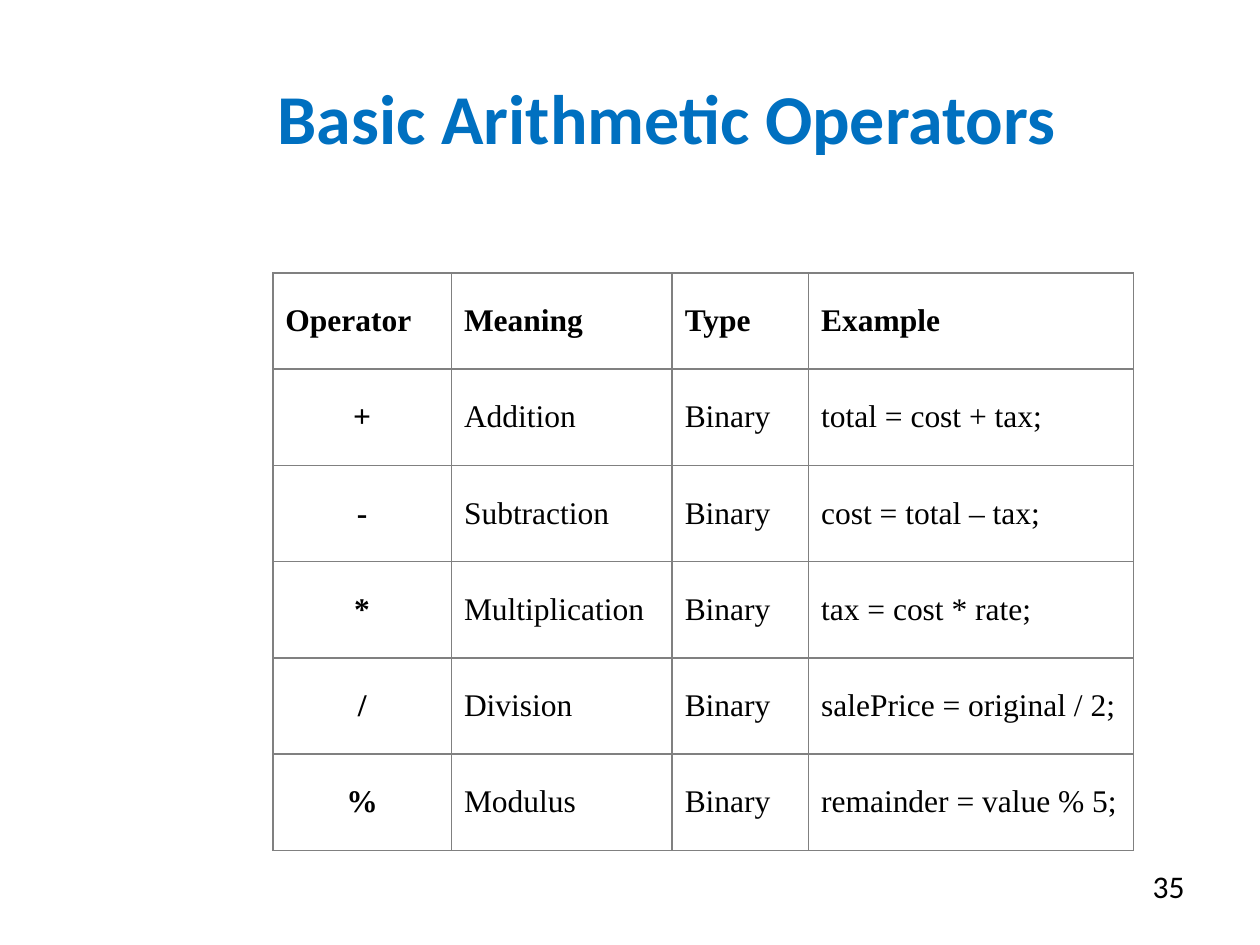
import lxml.etree
import pptx
import pptx.dml.color
import pptx.enum.text
import pptx.oxml.ns
import pptx.util

Cm = pptx.util.Cm
Pt = pptx.util.Pt
RGBColor = pptx.dml.color.RGBColor
PP_ALIGN = pptx.enum.text.PP_ALIGN
MSO_ANCHOR = pptx.enum.text.MSO_ANCHOR
qn = pptx.oxml.ns.qn

BLUE = RGBColor(0x00, 0x70, 0xC0)
BLACK = RGBColor(0x00, 0x00, 0x00)
WHITE = RGBColor(0xFF, 0xFF, 0xFF)
GRAY = RGBColor(0x80, 0x80, 0x80)

HEADINGS = ("Operator", "Meaning", "Type", "Example")
OPERATORS = (
    ("+", "Addition", "total = cost + tax;"),
    ("-", "Subtraction", "cost = total – tax;"),
    ("*", "Multiplication", "tax = cost * rate;"),
    ("/", "Division", "salePrice = original / 2;"),
    ("%", "Modulus", "remainder = value % 5;"),
)
COLUMN_WIDTHS = (3.6, 4.45, 2.75, 6.55)


def write_run(frame, text, size, font, color, bold, align):
    paragraph = frame.paragraphs[0]
    paragraph.alignment = align
    run = paragraph.add_run()
    run.text = text
    run.font.size = Pt(size)
    run.font.name = font
    run.font.bold = bold
    run.font.color.rgb = color


def add_label(slide, box, text, size, color, bold, align, anchor):
    frame = slide.shapes.add_textbox(*map(Cm, box)).text_frame
    frame.word_wrap = True
    frame.vertical_anchor = anchor
    write_run(frame, text, size, "Calibri", color, bold, align)


def add_title(slide, box):
    add_label(slide, box, "Basic Arithmetic Operators", 40, BLUE, True,
              PP_ALIGN.CENTER, MSO_ANCHOR.MIDDLE)


def add_page_number(slide, box):
    add_label(slide, box, "35", 18, BLACK, False,
              PP_ALIGN.RIGHT, MSO_ANCHOR.TOP)


def set_borders(cell):
    properties = cell._tc.get_or_add_tcPr()
    for side in ("a:lnL", "a:lnR", "a:lnT", "a:lnB"):
        border = lxml.etree.SubElement(properties, qn(side), w=str(Pt(1)))
        fill = lxml.etree.SubElement(border, qn("a:solidFill"))
        lxml.etree.SubElement(fill, qn("a:srgbClr"), val=str(GRAY))


def add_operator_table(slide, box):
    rows = [HEADINGS] + [
        (symbol, meaning, "Binary", example)
        for symbol, meaning, example in OPERATORS
    ]
    table = slide.shapes.add_table(
        len(rows), len(HEADINGS), *map(Cm, box)).table
    table.first_row = False
    table.horz_banding = False
    for column, width in zip(table.columns, COLUMN_WIDTHS):
        column.width = Cm(width)
    for row_index, row in enumerate(rows):
        table.rows[row_index].height = Cm(box[3] / len(rows))
        for column_index, text in enumerate(row):
            cell = table.cell(row_index, column_index)
            cell.vertical_anchor = MSO_ANCHOR.MIDDLE
            set_borders(cell)
            cell.fill.solid()
            cell.fill.fore_color.rgb = WHITE
            is_heading = row_index == 0
            is_symbol = column_index == 0 and not is_heading
            write_run(cell.text_frame, text, 18, "Times New Roman", BLACK,
                      is_heading or is_symbol,
                      PP_ALIGN.CENTER if is_symbol else PP_ALIGN.LEFT)


def main():
    deck = pptx.Presentation()
    deck.slide_width = Cm(25.4)
    deck.slide_height = Cm(19.05)
    slide = deck.slides.add_slide(deck.slide_layouts[6])
    add_title(slide, (4.65, 0.76, 17.58, 3.18))
    add_operator_table(slide, (5.5, 5.5, sum(COLUMN_WIDTHS), 11.64))
    add_page_number(slide, (18.2, 17.35, 5.93, 1.32))
    deck.save("out.pptx")


if __name__ == "__main__":
    main()
